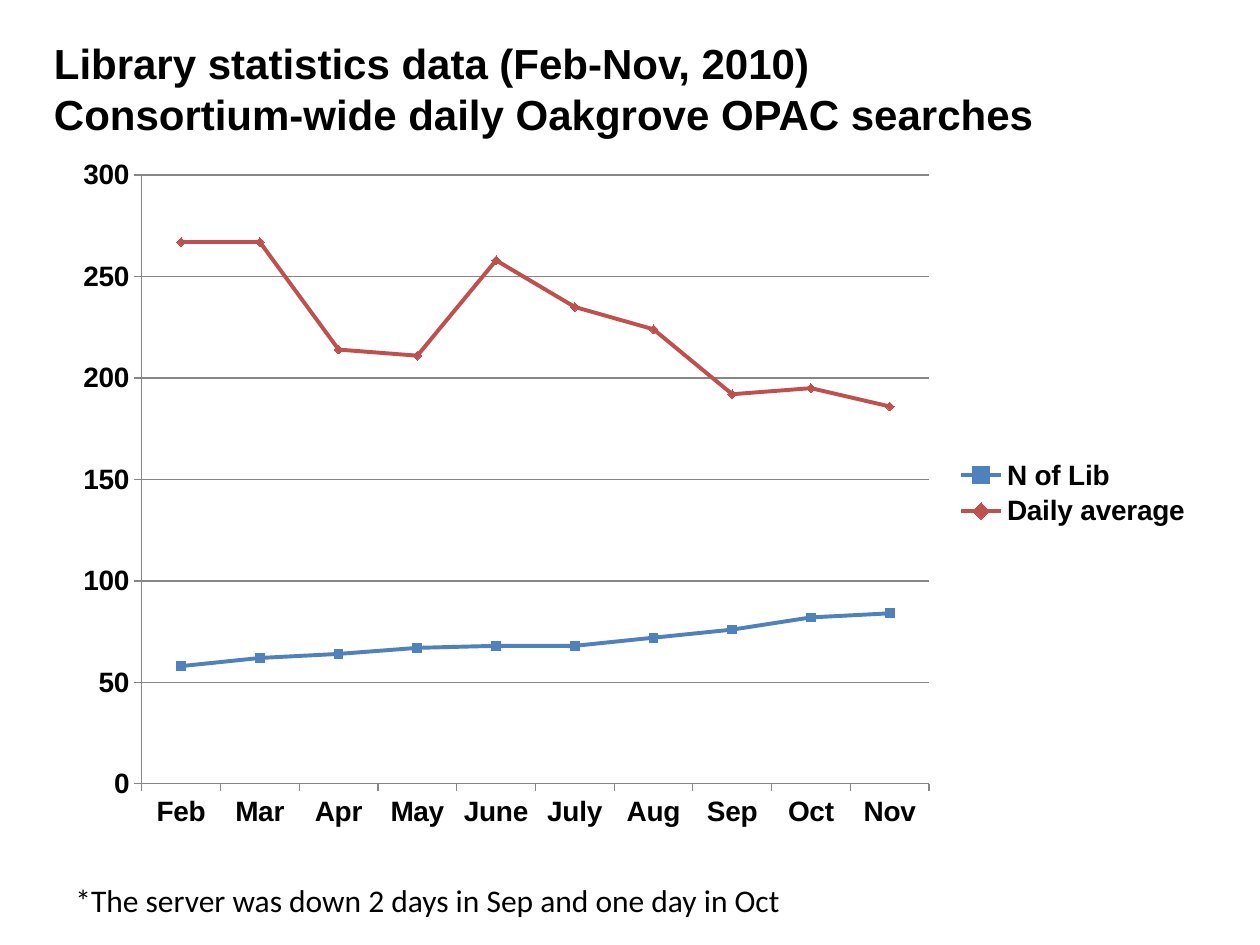
"""Build a slide with a line chart of library search statistics."""
from pptx import Presentation
from pptx import util as u
from pptx.chart.data import CategoryChartData
from pptx.dml.color import RGBColor
from pptx.enum import chart as ch, text

BLACK = RGBColor(0x00, 0x00, 0x00)
GRAY = RGBColor(0x86, 0x86, 0x86)
BLUE = RGBColor(0x4F, 0x81, 0xBD)
RED = RGBColor(0xC0, 0x50, 0x4D)


def add_text(s, lines, left, top, width, height, size, font, bold=False):
    tb = s.shapes.add_textbox(*map(u.Inches, (left, top, width, height)))
    tf = tb.text_frame
    tf.word_wrap = True
    tf.auto_size = text.MSO_AUTO_SIZE.SHAPE_TO_FIT_TEXT
    for i, line in enumerate(lines):
        p = tf.add_paragraph() if i else tf.paragraphs[0]
        r = p.add_run()
        r.text = line
        r.font.size = u.Pt(size)
        r.font.name = font
        r.font.bold = bold
        r.font.color.rgb = BLACK


prs = Presentation()
prs.slide_width, prs.slide_height = u.Inches(10), u.Inches(7.5)
s = prs.slides.add_slide(prs.slide_layouts[6])

data = CategoryChartData()
data.categories = ["Feb", "Mar", "Apr", "May", "June", "July", "Aug", "Sep", "Oct", "Nov"]
data.add_series("N of Lib", [58, 62, 64, 67, 68, 68, 72, 76, 82, 84])
data.add_series("Daily average", [267, 267, 214, 211, 258, 235, 224, 192, 195, 186])
chart = s.shapes.add_chart(
    ch.XL_CHART_TYPE.LINE_MARKERS,
    u.Inches(0.48), u.Inches(1.16), u.Inches(9.08), u.Inches(5.51), data,
).chart
chart.has_title = False
chart.font.size = u.Pt(16)
chart.font.name = "Arial"
chart.font.bold = True
chart.font.color.rgb = BLACK
chart.has_legend = True
chart.legend.position = ch.XL_LEGEND_POSITION.RIGHT
chart.legend.include_in_layout = False
chart.plots[0].vary_by_categories = False

value_axis = chart.value_axis
value_axis.minimum_scale, value_axis.maximum_scale = 0, 300
value_axis.major_unit = 50
value_axis.has_major_gridlines = True
value_axis.major_gridlines.format.line.color.rgb = GRAY
for axis in (chart.category_axis, value_axis):
    axis.major_tick_mark = ch.XL_TICK_MARK.OUTSIDE
    axis.format.line.color.rgb = GRAY

styles = [(BLUE, ch.XL_MARKER_STYLE.SQUARE), (RED, ch.XL_MARKER_STYLE.DIAMOND)]
for series, (color, marker) in zip(chart.series, styles):
    series.smooth = False
    series.format.line.color.rgb = color
    series.format.line.width = u.Pt(2.25)
    series.marker.style = marker
    series.marker.size = 5
    series.marker.format.fill.solid()
    series.marker.format.fill.fore_color.rgb = color
    series.marker.format.line.color.rgb = color

add_text(s, ["Library statistics data (Feb-Nov, 2010)",
             "Consortium-wide daily Oakgrove OPAC searches"],
         0.33, 0.25, 9.5, 0.91, 24, "Arial", bold=True)
add_text(s, ["*The server was down 2 days in Sep and one day in Oct"],
         0.5, 6.94, 9.17, 0.4, 18, "Calibri")

prs.save("out.pptx")
